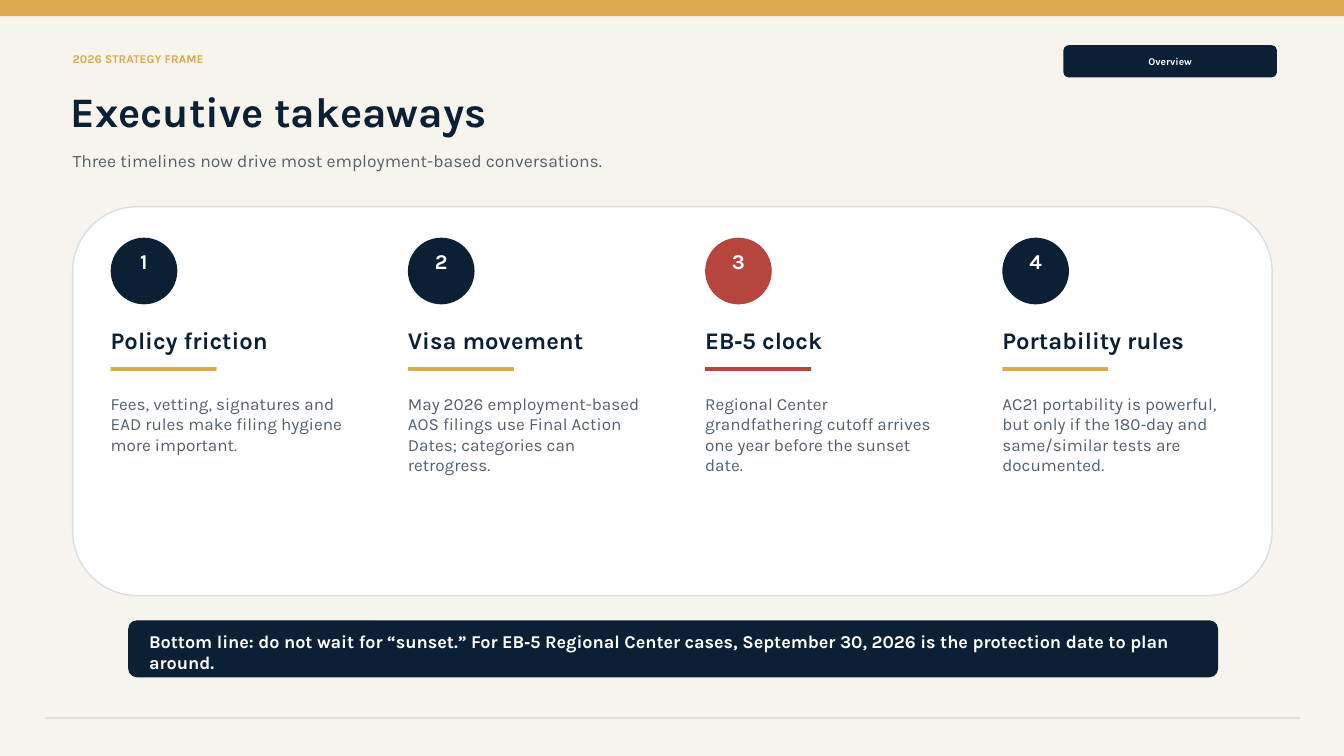
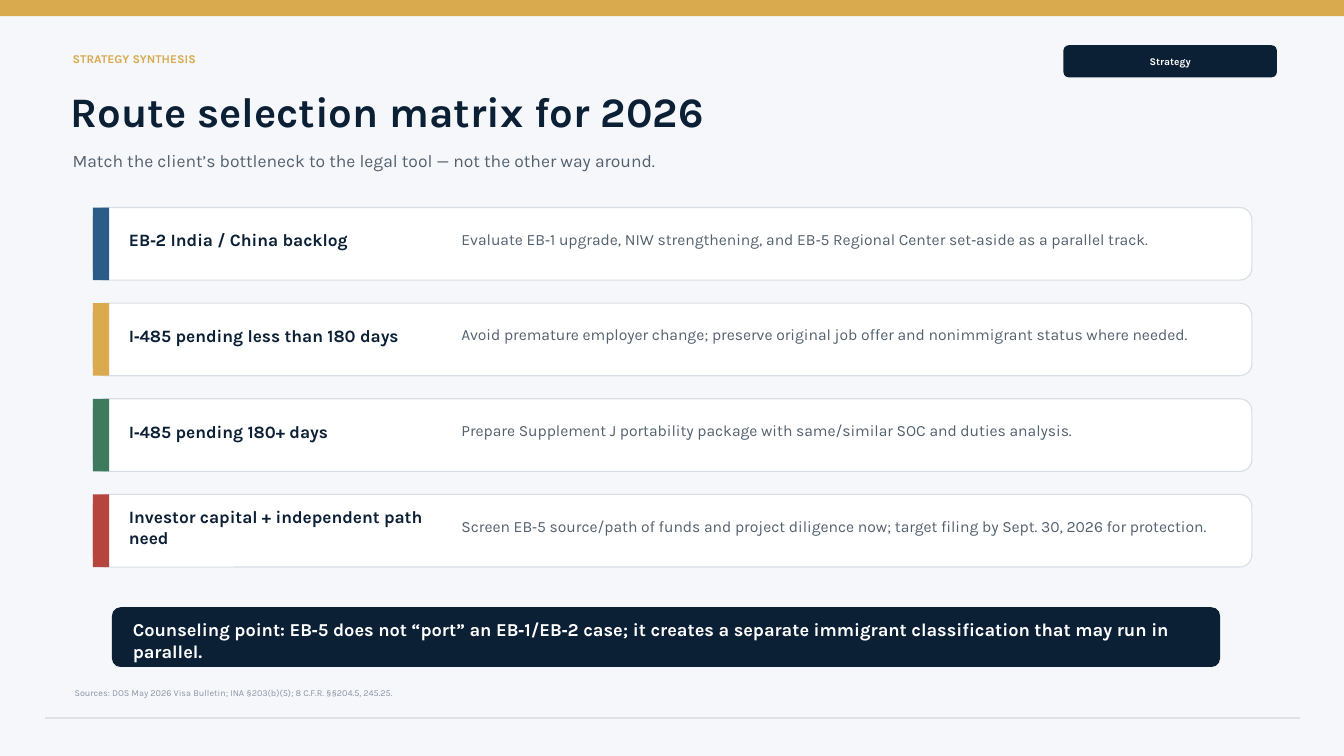
from dataclasses import dataclass
from typing import NamedTuple, Optional

from pptx import Presentation
from pptx.dml.color import RGBColor
from pptx.enum.shapes import MSO_SHAPE
from pptx.enum.text import MSO_ANCHOR, PP_ALIGN
from pptx.shapes.autoshape import Shape
from pptx.slide import Slide
from pptx.util import Cm, Pt

RECTANGLE = MSO_SHAPE.RECTANGLE
ROUNDED = MSO_SHAPE.ROUNDED_RECTANGLE
OVAL = MSO_SHAPE.OVAL
TOP = MSO_ANCHOR.TOP
MIDDLE = MSO_ANCHOR.MIDDLE
LEFT = PP_ALIGN.LEFT
CENTER = PP_ALIGN.CENTER


class TextStyle(NamedTuple):
    size: float
    color: str
    bold: bool = False
    align: PP_ALIGN = LEFT
    anchor: MSO_ANCHOR = MIDDLE


@dataclass(frozen=True)
class Theme:
    font: str = "Karla"
    cream: str = "F7F4ED"
    mist: str = "F5F7FA"
    white: str = "FFFFFF"
    navy: str = "0B1F35"
    gold: str = "D9AA4E"
    red: str = "B5453D"
    blue: str = "2B5C88"
    green: str = "3E7A5E"
    border: str = "D8DEE6"
    footer: str = "D2D7DD"
    kicker: TextStyle = TextStyle(8.5, "D9AA4E", True)
    title: TextStyle = TextStyle(30, "0B1F35", True)
    subtitle: TextStyle = TextStyle(12.5, "53606E")
    badge: TextStyle = TextStyle(7.3, "FFFFFF", True, CENTER)
    number: TextStyle = TextStyle(15, "FFFFFF", True, CENTER)
    heading: TextStyle = TextStyle(17, "0B1F35", True)
    body: TextStyle = TextStyle(12.2, "53606E", anchor=TOP)
    row_label: TextStyle = TextStyle(12.4, "0B1F35", True)
    row_text: TextStyle = TextStyle(11.2, "53606E")
    banner: TextStyle = TextStyle(13, "FFFFFF", True)
    source: TextStyle = TextStyle(6.5, "8A94A6")


THEME = Theme()


class Area(NamedTuple):
    left: float
    top: float
    width: float
    height: float


class Insets(NamedTuple):
    left: float = 0
    top: float = 0
    right: float = 0
    bottom: float = 0


@dataclass(frozen=True)
class Frame:
    background: str
    kicker: str
    title: str
    subtitle: str
    badge: str


@dataclass(frozen=True)
class Takeaway:
    heading: str
    body: str
    circle: str = THEME.navy
    rule: str = THEME.gold


@dataclass(frozen=True)
class Route:
    label: str
    advice: str
    color: str


OVERVIEW = Frame(
    THEME.cream,
    "2026 STRATEGY FRAME",
    "Executive takeaways",
    "Three timelines now drive most employment-based conversations.",
    "Overview",
)
STRATEGY = Frame(
    THEME.mist,
    "STRATEGY SYNTHESIS",
    "Route selection matrix for 2026",
    "Match the client’s bottleneck to the legal tool — not the other way around.",
    "Strategy",
)
TAKEAWAYS = [
    Takeaway(
        "Policy friction",
        "Fees, vetting, signatures and EAD rules make filing hygiene more important.",
    ),
    Takeaway(
        "Visa movement",
        "May 2026 employment-based AOS filings use Final Action Dates; "
        "categories can retrogress.",
    ),
    Takeaway(
        "EB‑5 clock",
        "Regional Center grandfathering cutoff arrives one year before the sunset date.",
        THEME.red,
        THEME.red,
    ),
    Takeaway(
        "Portability rules",
        "AC21 portability is powerful, but only if the 180‑day and "
        "same/similar tests are documented.",
    ),
]
ROUTES = [
    Route(
        "EB‑2 India / China backlog",
        "Evaluate EB‑1 upgrade, NIW strengthening, and EB‑5 Regional Center "
        "set‑aside as a parallel track.",
        THEME.blue,
    ),
    Route(
        "I‑485 pending less than 180 days",
        "Avoid premature employer change; preserve original job offer and "
        "nonimmigrant status where needed.",
        THEME.gold,
    ),
    Route(
        "I‑485 pending 180+ days",
        "Prepare Supplement J portability package with same/similar SOC and "
        "duties analysis.",
        THEME.green,
    ),
    Route(
        "Investor capital + independent path need",
        "Screen EB‑5 source/path of funds and project diligence now; target "
        "filing by Sept. 30, 2026 for protection.",
        THEME.red,
    ),
]


def write(box: Shape, text: str, style: TextStyle, insets: Insets = Insets()) -> None:
    frame = box.text_frame
    frame.word_wrap = True
    frame.vertical_anchor = style.anchor
    frame.margin_left = Cm(insets.left)
    frame.margin_top = Cm(insets.top)
    frame.margin_right = Cm(insets.right)
    frame.margin_bottom = Cm(insets.bottom)
    para = frame.paragraphs[0]
    para.alignment = style.align
    span = para.add_run()
    span.text = text
    span.font.name = THEME.font
    span.font.size = Pt(style.size)
    span.font.bold = style.bold
    span.font.color.rgb = RGBColor.from_string(style.color)


def add_text(page: Slide, area: Area, text: str, style: TextStyle) -> None:
    write(page.shapes.add_textbox(*map(Cm, area)), text, style)


def add_box(
    page: Slide,
    kind: MSO_SHAPE,
    area: Area,
    fill: str,
    line: Optional[str] = None,
    line_width: float = 1,
) -> Shape:
    box = page.shapes.add_shape(kind, *map(Cm, area))
    box.shadow.inherit = False
    box.fill.solid()
    box.fill.fore_color.rgb = RGBColor.from_string(fill)
    if line:
        box.line.color.rgb = RGBColor.from_string(line)
        box.line.width = Pt(line_width)
    else:
        box.line.fill.background()
    return box


def add_page(deck: Presentation, frame: Frame) -> Slide:
    page = deck.slides.add_slide(deck.slide_layouts[6])
    page.background.fill.solid()
    page.background.fill.fore_color.rgb = RGBColor.from_string(frame.background)
    add_box(page, RECTANGLE, Area(0, 0, 33.87, 0.41), THEME.gold)
    add_text(page, Area(1.83, 1.19, 19.3, 0.56), frame.kicker, THEME.kicker)
    add_text(page, Area(1.78, 2.08, 21.34, 1.4), frame.title, THEME.title)
    add_text(page, Area(1.83, 3.61, 23.37, 0.86), frame.subtitle, THEME.subtitle)
    badge = add_box(page, ROUNDED, Area(26.8, 1.14, 5.38, 0.81), THEME.navy)
    write(badge, frame.badge, THEME.badge)
    add_box(page, RECTANGLE, Area(1.14, 18.08, 31.62, 0.03), THEME.footer)
    return page


def add_banner(page: Slide, area: Area, text: str, size: float) -> None:
    banner = add_box(page, ROUNDED, area, THEME.navy, THEME.navy)
    banner.adjustments[0] = 0.2 / area.height
    style = THEME.banner._replace(size=size)
    write(banner, text, style, Insets(left=0.45, top=0.15, right=0.45))


def add_takeaway(page: Slide, number: int, left: float, item: Takeaway) -> None:
    circle = add_box(page, OVAL, Area(left, 5.99, 1.68, 1.68), item.circle)
    write(circle, str(number), THEME.number, Insets(bottom=0.51))
    add_text(page, Area(left, 8.18, 5.79, 0.76), item.heading, THEME.heading)
    add_box(page, RECTANGLE, Area(left, 9.25, 2.67, 0.1), item.rule)
    add_text(page, Area(left, 9.91, 5.97, 3.2), item.body, THEME.body)


def add_route(page: Slide, top: float, route: Route) -> None:
    left, height = 2.34, 1.83
    row = Area(left, top, 29.21, height)
    add_box(page, ROUNDED, row, THEME.white, THEME.border, 0.8)
    add_box(page, RECTANGLE, Area(left, top, 0.41, height), route.color)
    add_text(page, Area(3.25, top + 0.56, 7.92, 0.51), route.label, THEME.row_label)
    add_text(page, Area(11.63, top + 0.46, 19, 0.66), route.advice, THEME.row_text)


def build_overview(deck: Presentation) -> None:
    page = add_page(deck, OVERVIEW)
    card = Area(1.83, 5.21, 30.23, 9.8)
    add_box(page, ROUNDED, card, THEME.white, THEME.border)
    for index, item in enumerate(TAKEAWAYS):
        add_takeaway(page, index + 1, 2.79 + 7.49 * index, item)
    add_banner(
        page,
        Area(3.25, 15.65, 27.43, 1.4),
        "Bottom line: do not wait for “sunset.” For EB‑5 Regional Center cases, "
        "September 30, 2026 is the protection date to plan around.",
        12.9,
    )


def build_strategy(deck: Presentation) -> None:
    page = add_page(deck, STRATEGY)
    for index, route in enumerate(ROUTES):
        add_route(page, 5.23 + 2.41 * index, route)
    add_banner(
        page,
        Area(2.84, 15.32, 27.89, 1.47),
        "Counseling point: EB‑5 does not “port” an EB‑1/EB‑2 case; it creates a "
        "separate immigrant classification that may run in parallel.",
        13,
    )
    add_text(
        page,
        Area(1.88, 17.22, 30.23, 0.46),
        "Sources: DOS May 2026 Visa Bulletin; INA §203(b)(5); "
        "8 C.F.R. §§204.5, 245.25.",
        THEME.source,
    )


def main() -> None:
    deck = Presentation()
    deck.slide_width = Cm(33.87)
    deck.slide_height = Cm(19.05)
    build_overview(deck)
    build_strategy(deck)
    deck.save("out.pptx")


if __name__ == "__main__":
    main()
